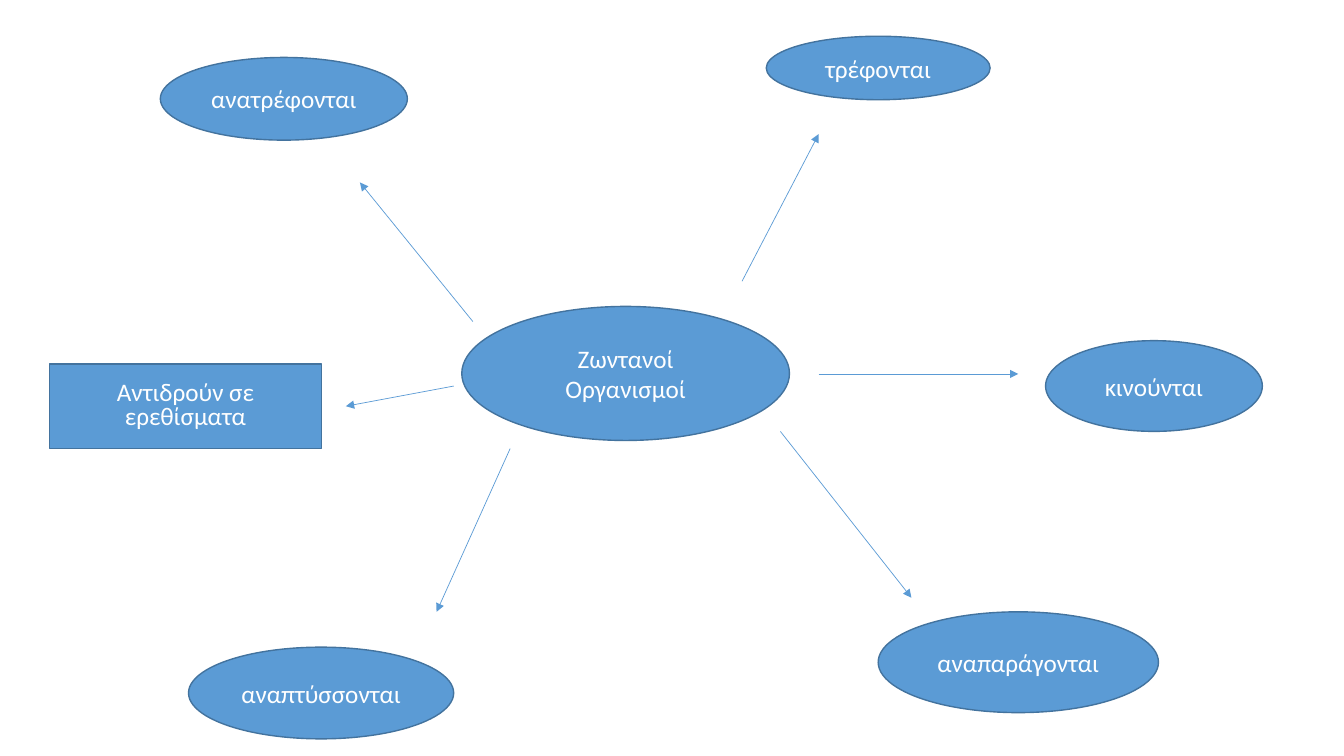
from lxml.etree import SubElement
from pptx import Presentation
from pptx.dml.color import RGBColor
from pptx.enum.shapes import MSO_CONNECTOR, MSO_SHAPE
from pptx.enum.text import MSO_ANCHOR, PP_ALIGN
from pptx.oxml.ns import qn
from pptx.util import Pt

EMU_PER_PX = 9144  # 100 px to the inch

TRAITS = [
    ("ανατρέφονται", (159, 57, 245, 82)),
    ("τρέφονται", (760, 36, 222, 63)),
    ("κινούνται", (1037, 338, 215, 90)),
    ("αναπαράγονται", (871, 607, 278, 100)),
    ("αναπτύσσονται", (187, 642, 263, 91)),
]
ARROWS = [
    ((736, 279), (812, 133)),
    ((469, 319), (357, 181)),
    ((450, 383), (343, 403)),
    ((506, 445), (433, 607)),
    ((812, 371), (1010, 371)),
    ((774, 428), (904, 593)),
]


def px(length):
    return length * EMU_PER_PX


def color(value):
    return RGBColor.from_string(value)


class ConceptMap:
    FILL = "5B9BD5"
    OUTLINE = "43739E"
    TEXT = "FFFFFF"
    FONT = "Calibri"

    def __init__(self, slide):
        self.slide = slide

    def node(self, text, box, kind=MSO_SHAPE.OVAL):
        """Add a labelled shape and return its paragraph."""
        shape = self.slide.shapes.add_shape(kind, *map(px, box))
        shape.shadow.inherit = False
        shape.fill.solid()
        shape.fill.fore_color.rgb = color(self.FILL)
        shape.line.color.rgb = color(self.OUTLINE)
        shape.line.width = Pt(1)
        frame = shape.text_frame
        frame.word_wrap = True
        frame.vertical_anchor = MSO_ANCHOR.MIDDLE
        paragraph = frame.paragraphs[0]
        paragraph.text = text
        paragraph.alignment = PP_ALIGN.CENTER
        paragraph.font.name = self.FONT
        paragraph.font.size = Pt(18)
        paragraph.font.color.rgb = color(self.TEXT)
        return paragraph

    def arrow(self, start, end):
        connector = self.slide.shapes.add_connector(
            MSO_CONNECTOR.STRAIGHT, *map(px, start + end))
        connector.line.color.rgb = color(self.FILL)
        connector.line.width = Pt(0.5)
        SubElement(connector.line._get_or_add_ln(), qn("a:tailEnd"), type="triangle")
        SubElement(connector._element.spPr, qn("a:effectLst"))


def main():
    presentation = Presentation()
    presentation.slide_width = px(1333)
    presentation.slide_height = px(750)
    slide = presentation.slides.add_slide(presentation.slide_layouts[6])
    concept_map = ConceptMap(slide)

    concept_map.node("Ζωντανοί Οργανισμοί", (458, 304, 325, 133))
    for text, box in TRAITS:
        concept_map.node(text, box)
    reaction = concept_map.node(
        "Αντιδρούν σε ερεθίσματα", (49, 361, 270, 84), MSO_SHAPE.RECTANGLE)
    reaction.line_spacing = 0.8
    reaction.space_before = Pt(10)
    for start, end in ARROWS:
        concept_map.arrow(start, end)

    presentation.save("out.pptx")


if __name__ == "__main__":
    main()
